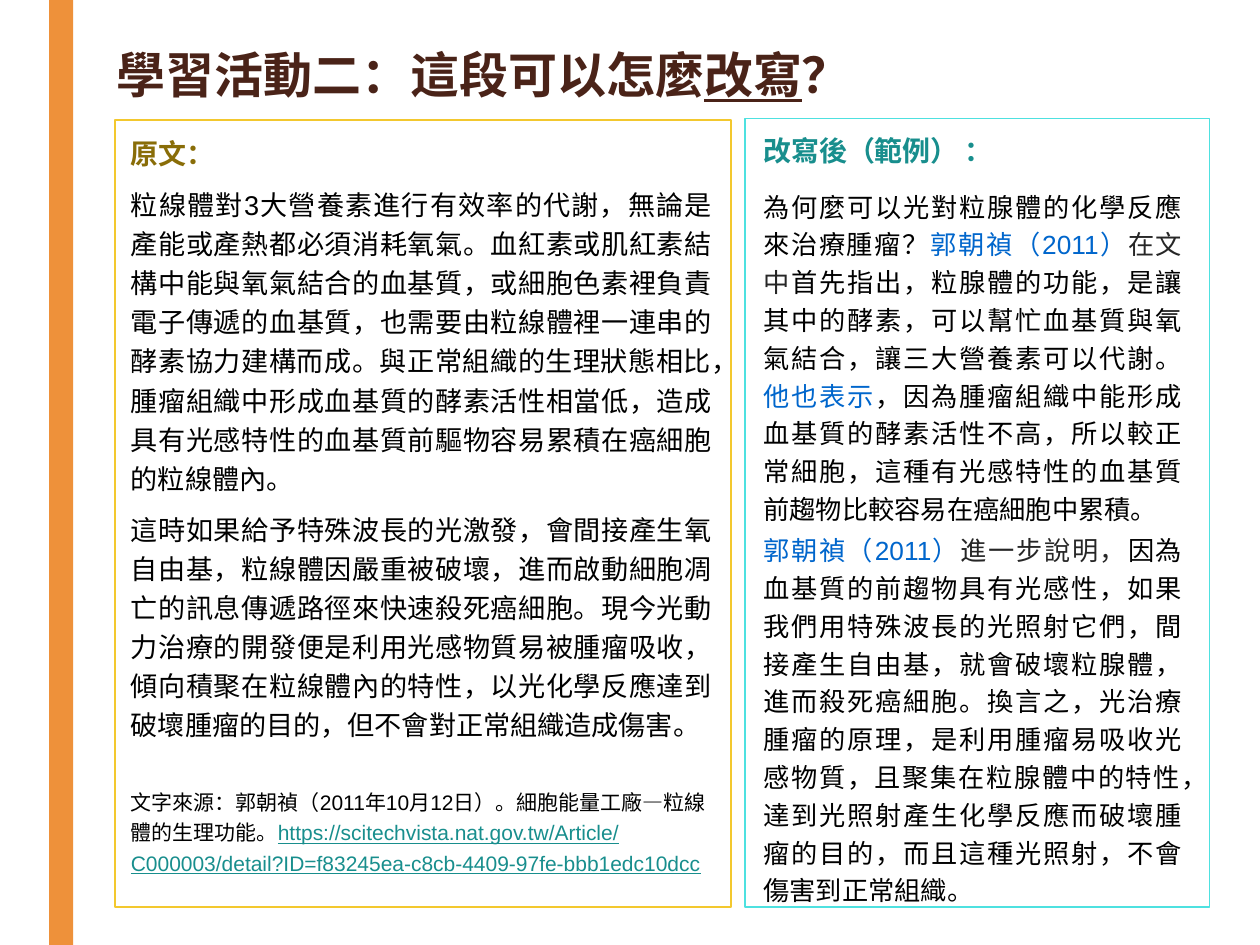
import pptx
import pptx.dml.color
import pptx.enum.shapes
import pptx.enum.text
import pptx.util

Inches = pptx.util.Inches
Pt = pptx.util.Pt
ALIGN = pptx.enum.text.PP_ALIGN

WHITE, BLACK, BROWN, GREY = "FFFFFF", "000000", "4A2318", "262626"
ORANGE, GOLD, OLIVE = "EE913A", "F3C82E", "896D08"
AQUA, TEAL, BLUE = "4EE1E0", "188E8D", "0066CC"


def rgb(value):
    return pptx.dml.color.RGBColor.from_string(value)


class SlideBuilder:
    font_name = "Arial"

    def __init__(self, slide):
        self.slide = slide

    def background(self, color):
        fill = self.slide.background.fill
        fill.solid()
        fill.fore_color.rgb = rgb(color)

    def box(self, left, top, width, height, fill, line=None):
        sp = self.slide.shapes.add_shape(
            pptx.enum.shapes.MSO_SHAPE.RECTANGLE,
            Inches(left), Inches(top), Inches(width), Inches(height))
        sp.shadow.inherit = False
        sp.fill.solid()
        sp.fill.fore_color.rgb = rgb(fill)
        if line:
            sp.line.color.rgb = rgb(line)
            sp.line.width = Pt(1)
        else:
            sp.line.fill.background()

    def text_frame(self, left, top, width, height):
        sp = self.slide.shapes.add_textbox(
            Inches(left), Inches(top), Inches(width), Inches(height))
        tf = sp.text_frame
        tf.word_wrap = True
        return tf

    def paragraph(self, tf, runs, size, color=BLACK, bold=False, align=ALIGN.LEFT,
                  spacing=1.2, before=0, after=2):
        p = tf.paragraphs[0] if not tf.text else tf.add_paragraph()
        p.alignment = align
        p.line_spacing = spacing
        p.space_before, p.space_after = Pt(before), Pt(after)
        p.font.name, p.font.size, p.font.bold = self.font_name, Pt(size), bold
        p.font.color.rgb = rgb(color)
        for text, run_color, underline in runs:
            r = p.add_run()
            r.text = text
            if run_color:
                r.font.color.rgb = rgb(run_color)
            if underline:
                r.font.underline = True


def plain(text):
    return [(text, None, False)]


def colored(*pairs):
    return [(text, color, False) for text, color in pairs]


ORIGINAL = [
    "粒線體對3大營養素進行有效率的代謝，無論是產能或產熱都必須消耗氧氣。"
    "血紅素或肌紅素結構中能與氧氣結合的血基質，或細胞色素裡負責電子傳遞的血基質，"
    "也需要由粒線體裡一連串的酵素協力建構而成。與正常組織的生理狀態相比，"
    "腫瘤組織中形成血基質的酵素活性相當低，"
    "造成具有光感特性的血基質前驅物容易累積在癌細胞的粒線體內。",
    "這時如果給予特殊波長的光激發，會間接產生氧自由基，粒線體因嚴重被破壞，"
    "進而啟動細胞凋亡的訊息傳遞路徑來快速殺死癌細胞。"
    "現今光動力治療的開發便是利用光感物質易被腫瘤吸收，傾向積聚在粒線體內的特性，"
    "以光化學反應達到破壞腫瘤的目的，但不會對正常組織造成傷害。",
]

SOURCE = [
    ("文字來源：郭朝禎（2011年10月12日）。細胞能量工廠—粒線體的生理功能。", None, False),
    ("https://scitechvista.nat.gov.tw/Article/C000003/detail"
     "?ID=f83245ea-c8cb-4409-97fe-bbb1edc10dcc", TEAL, True),
]

REWRITE = [
    (10, colored(
        ("為何麼可以光對粒腺體的化學反應來治療腫瘤？", None),
        ("郭朝禎（2011）", BLUE),
        ("在文中", GREY),
        ("首先指出，粒腺體的功能，是讓其中的酵素，可以幫忙血基質與氧氣結合，"
         "讓三大營養素可以代謝。", None),
        ("他也表示", BLUE),
        ("，因為腫瘤組織中能形成血基質的酵素活性不高，所以較正常細胞，"
         "這種有光感特性的血基質前趨物比較容易在癌細胞中累積。", None))),
    (0, colored(
        ("郭朝禎（2011）", BLUE),
        ("進一步說明，", GREY),
        ("因為血基質的前趨物具有光感性，如果我們用特殊波長的光照射它們，"
         "間接產生自由基，就會破壞粒腺體，進而殺死癌細胞。換言之，光治療腫瘤的原理，"
         "是利用腫瘤易吸收光感物質，且聚集在粒腺體中的特性，"
         "達到光照射產生化學反應而破壞腫瘤的目的，而且這種光照射，"
         "不會傷害到正常組織。", None))),
]


def main():
    prs = pptx.Presentation()
    prs.slide_width, prs.slide_height = Inches(10), Inches(7.5)
    s = SlideBuilder(prs.slides.add_slide(prs.slide_layouts[6]))

    s.background(WHITE)
    s.box(0.39, 0, 0.19, 7.5, ORANGE)
    s.box(0.91, 0.95, 4.89, 6.25, WHITE, GOLD)
    s.box(5.91, 0.94, 3.69, 6.26, WHITE, AQUA)

    title = s.text_frame(0.83, 0.36, 7.88, 0.76)
    s.paragraph(title, [("學習活動二：這段可以怎麼", None, False),
                        ("改寫", None, True), ("？", None, False)],
                28, BROWN, bold=True, spacing=0.89, after=0)

    left = s.text_frame(0.94, 0.98, 4.81, 6.22)
    s.paragraph(left, plain("原文："), 16, OLIVE, bold=True, before=10)
    for text in ORIGINAL:
        s.paragraph(left, plain(text), 15.5, align=ALIGN.JUSTIFY, before=5)
    s.paragraph(left, SOURCE, 12, before=23)

    right = s.text_frame(5.96, 1.01, 3.52, 6.41)
    s.paragraph(right, plain("改寫後（範例） ："), 16, TEAL, bold=True, spacing=1.0, after=0)
    for before, runs in REWRITE:
        s.paragraph(right, runs, 15, align=ALIGN.JUSTIFY, before=before)

    prs.save("out.pptx")


if __name__ == "__main__":
    main()
